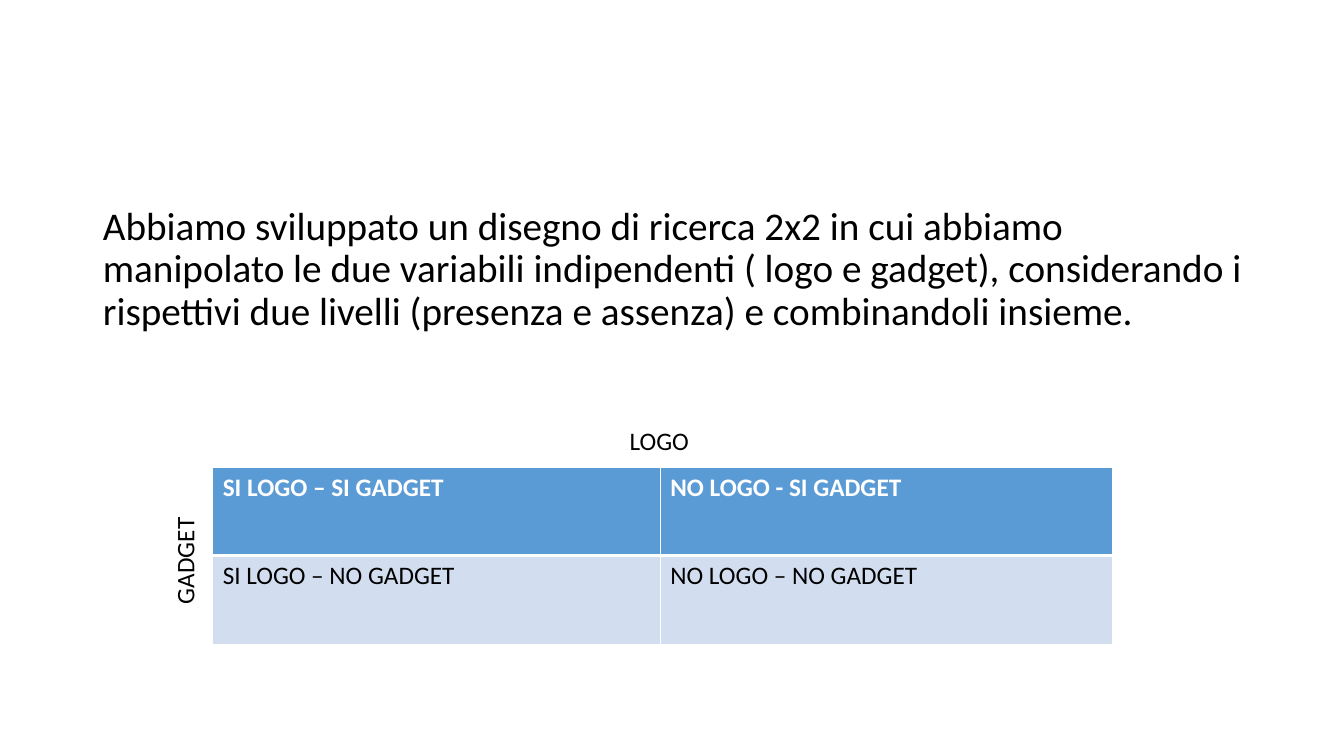
from dataclasses import dataclass

from lxml import etree
from pptx import Presentation
from pptx import util as u
from pptx.dml.color import RGBColor
from pptx.enum import text
from pptx.oxml import ns

BLACK = RGBColor(0x00, 0x00, 0x00)
WHITE = RGBColor(0xFF, 0xFF, 0xFF)
HEADER_BLUE = RGBColor(0x5B, 0x9B, 0xD5)
PALE_BLUE = RGBColor(0xD2, 0xDE, 0xEF)

FONT_NAME = "Calibri"
THIN, THICK = u.Pt(1), u.Pt(3)
BODY_TEXT = (
    "Abbiamo sviluppato un disegno di ricerca 2x2 in cui abbiamo manipolato "
    "le due variabili indipendenti ( logo e gadget), considerando i rispettivi "
    "due livelli (presenza e assenza) e combinandoli insieme."
)


@dataclass(frozen=True)
class AxisLabel:
    wording: str
    left: float
    top: float
    width: float
    height: float
    alignment: text.PP_ALIGN
    rotation: int = 0


@dataclass(frozen=True)
class DesignRow:
    conditions: tuple[str, str]
    height: float
    fill: RGBColor
    color: RGBColor
    bold: bool
    borders: dict[str, int]


AXIS_LABELS = (
    AxisLabel("LOGO", 7.19, 10.59, 18.85, 1.02, text.PP_ALIGN.CENTER),
    AxisLabel("GADGET", 3.15, 13.46, 3.0, 1.02, text.PP_ALIGN.LEFT, 270),
)
COLUMN_WIDTHS = (11.28, 11.4)
DESIGN_ROWS = (
    DesignRow(
        ("SI LOGO – SI GADGET", "NO LOGO - SI GADGET"),
        2.21, HEADER_BLUE, WHITE, True,
        {"lnL": THIN, "lnR": THIN, "lnT": THIN, "lnB": THICK},
    ),
    DesignRow(
        ("SI LOGO – NO GADGET", "NO LOGO – NO GADGET"),
        2.24, PALE_BLUE, BLACK, False,
        {"lnL": THIN, "lnR": THIN, "lnT": THICK, "lnB": THIN},
    ),
)


def write_paragraph(paragraph, wording: str, size: int, color: RGBColor, bold: bool = False) -> None:
    run = paragraph.add_run()
    run.text = wording
    font_format = {"name": FONT_NAME, "size": u.Pt(size), "bold": bold}
    for attribute, value in font_format.items():
        setattr(run.font, attribute, value)
    run.font.color.rgb = color


def fill_body(placeholder) -> None:
    position = {
        "left": u.Cm(2.34), "top": u.Cm(5.08),
        "width": u.Cm(29.21), "height": u.Cm(12.09),
    }
    for attribute, value in position.items():
        setattr(placeholder, attribute, value)
    placeholder.text_frame.auto_size = text.MSO_AUTO_SIZE.NONE
    paragraph = placeholder.text_frame.paragraphs[0]
    paragraph_format = {"line_spacing": 0.9, "space_before": u.Pt(10)}
    for attribute, value in paragraph_format.items():
        setattr(paragraph, attribute, value)
    write_paragraph(paragraph, BODY_TEXT, 28, BLACK)
    properties = paragraph._p.get_or_add_pPr()
    properties.set("marL", "0")
    properties.set("indent", "0")
    etree.SubElement(properties, ns.qn("a:buNone"))


def set_borders(cell, borders: dict[str, int]) -> None:
    properties = cell._tc.get_or_add_tcPr()
    for index, (side, width) in enumerate(borders.items()):
        line = etree.Element(ns.qn(f"a:{side}"), w=str(int(width)))
        fill = etree.SubElement(line, ns.qn("a:solidFill"))
        etree.SubElement(fill, ns.qn("a:srgbClr"), val=str(WHITE))
        properties.insert(index, line)


def draw_design_table(slide) -> None:
    table = slide.shapes.add_table(
        len(DESIGN_ROWS), len(COLUMN_WIDTHS), u.Cm(5.36), u.Cm(11.79),
        u.Cm(sum(COLUMN_WIDTHS)), u.Cm(sum(row.height for row in DESIGN_ROWS)),
    ).table
    for column, width in zip(table.columns, COLUMN_WIDTHS):
        column.width = u.Cm(width)
    for row_index, row in enumerate(DESIGN_ROWS):
        table.rows[row_index].height = u.Cm(row.height)
        for column_index, condition in enumerate(row.conditions):
            cell = table.cell(row_index, column_index)
            cell.fill.solid()
            cell.fill.fore_color.rgb = row.fill
            set_borders(cell, row.borders)
            paragraph = cell.text_frame.paragraphs[0]
            write_paragraph(paragraph, condition, 18, row.color, row.bold)


def draw_axis_label(slide, label: AxisLabel) -> None:
    bounds = (label.left, label.top, label.width, label.height)
    shape = slide.shapes.add_textbox(*map(u.Cm, bounds))
    shape.rotation = label.rotation
    frame_format = {"word_wrap": True, "auto_size": text.MSO_AUTO_SIZE.SHAPE_TO_FIT_TEXT}
    for attribute, value in frame_format.items():
        setattr(shape.text_frame, attribute, value)
    paragraph = shape.text_frame.paragraphs[0]
    paragraph.alignment = label.alignment
    write_paragraph(paragraph, label.wording, 18, BLACK)


def main() -> None:
    presentation = Presentation()
    presentation.slide_width = u.Cm(33.87)
    presentation.slide_height = u.Cm(19.05)
    slide = presentation.slides.add_slide(presentation.slide_layouts[1])
    title = slide.shapes.title
    title.element.getparent().remove(title.element)
    fill_body(slide.placeholders[1])
    draw_design_table(slide)
    for label in AXIS_LABELS:
        draw_axis_label(slide, label)
    presentation.save("out.pptx")


if __name__ == "__main__":
    main()
